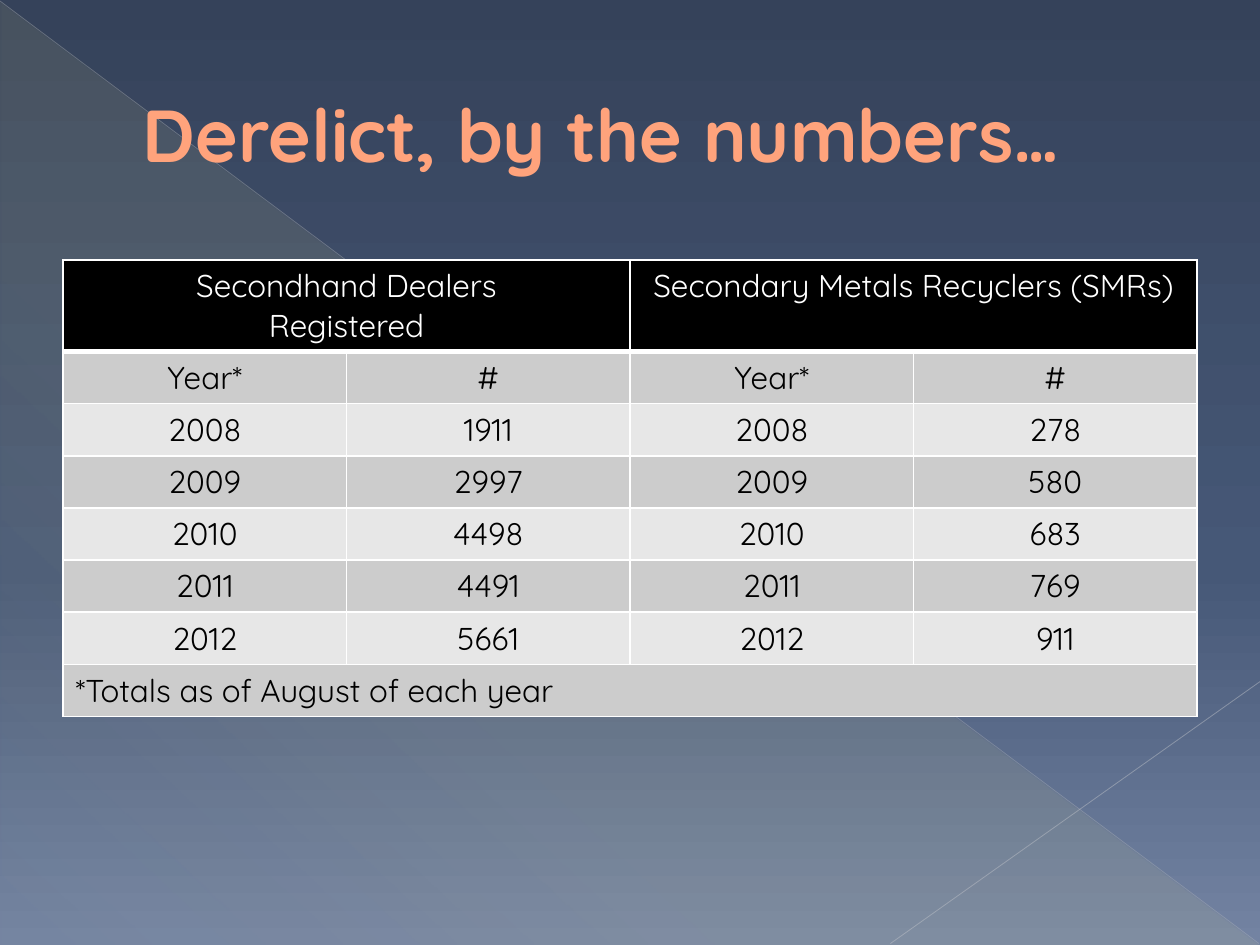
from dataclasses import dataclass

from lxml.etree import SubElement
from pptx import Presentation
from pptx.dml.color import RGBColor
from pptx.enum.shapes import MSO_CONNECTOR as CONNECTOR, MSO_SHAPE as SHAPE
from pptx.enum.text import MSO_ANCHOR as ANCHOR, MSO_AUTO_SIZE as AUTO_SIZE, PP_ALIGN as ALIGN
from pptx.oxml.ns import qn
from pptx.util import Cm, Pt


@dataclass(frozen=True)
class Theme:
    font: str = "Quicksand"
    title_size: float = 42
    body_size: float = 18
    title: str = "FFA37C"
    title_outline: str = "B05D26"
    header: str = "000000"
    header_text: str = "FFFFFF"
    body_text: str = "000000"
    bands: tuple = ("CCCCCC", "E7E7E7")
    border: str = "FFFFFF"
    backdrop: tuple = ((0, "35425A", 100), (60, "465877", 100), (100, "7383A2", 100))
    wedge: tuple = ((0, "FFF39D", 10), (70, "FFF39D", 8), (100, "FFF39D", 1))
    diagonal: str = "BABDC4"
    corner: str = "C1C4CA"


THEME = Theme()
HEADERS = ("Secondhand Dealers\nRegistered", "Secondary Metals Recyclers (SMRs)")
ROWS = (
    ("Year*", "#", "Year*", "#"),
    ("2008", "1911", "2008", "278"),
    ("2009", "2997", "2009", "580"),
    ("2010", "4498", "2010", "683"),
    ("2011", "4491", "2011", "769"),
    ("2012", "5661", "2012", "911"),
)
FOOTNOTE = "*Totals as of August of each year"


def rgb(color):
    return RGBColor.from_string(color)


def add_color(parent, color, opacity=100):
    clr = SubElement(parent, qn("a:srgbClr"), val=color)
    if opacity < 100:
        SubElement(clr, qn("a:alpha"), val=str(opacity * 1000))


def set_gradient(fill, parent, stops, angle):
    """Give fill a gradient of (position, colour, opacity) stops, clockwise from the right."""
    fill.gradient()
    grad = parent.find(".//" + qn("a:gradFill"))
    for child in list(grad):
        grad.remove(child)
    gs_list = SubElement(grad, qn("a:gsLst"))
    for pos, color, opacity in stops:
        add_color(SubElement(gs_list, qn("a:gs"), pos=str(pos * 1000)), color, opacity)
    SubElement(grad, qn("a:lin"), ang=str(angle * 60000), scaled="0")


def add_wedge(s):
    sp = s.shapes.add_shape(SHAPE.RIGHT_TRIANGLE, Cm(0.02), Cm(0.04), Cm(25.36), Cm(19))
    sp.shadow.inherit = False
    sp.line.fill.background()
    set_gradient(sp.fill, sp.element.spPr, THEME.wedge, 133)


def add_line(s, start, end, color, width, opacity):
    line = s.shapes.add_connector(CONNECTOR.STRAIGHT, *map(Cm, start + end))
    line.line.width = Pt(width)
    line.line.color.rgb = rgb(color)
    clr = line.element.spPr.find(".//" + qn("a:srgbClr"))
    SubElement(clr, qn("a:alpha"), val=str(opacity * 1000))
    SubElement(line.element.spPr, qn("a:effectLst"))


def add_title(s, text):
    title = s.shapes.title
    s.shapes.element.append(title.element)  # in front of the backdrop
    title.left, title.top, title.width, title.height = Cm(1.27), Cm(0.74), Cm(22.86), Cm(3.89)
    tf = title.text_frame
    tf.text = text
    tf.auto_size = AUTO_SIZE.NONE
    tf.vertical_anchor = ANCHOR.MIDDLE
    p = tf.paragraphs[0]
    p.alignment = ALIGN.LEFT
    pPr = p._p.get_or_add_pPr()
    pPr.set("marL", str(Cm(1.35)))
    pPr.set("indent", "0")
    font = p.runs[0].font
    font.name, font.size, font.bold = THEME.font, Pt(THEME.title_size), True
    font.color.rgb = rgb(THEME.title)
    outline = SubElement(p.runs[0]._r.get_or_add_rPr(), qn("a:ln"), w=str(Pt(0.5)))
    add_color(SubElement(outline, qn("a:solidFill")), THEME.title_outline)
    outline.getparent().insert(0, outline)


def format_cell(cell, fill, color, bottom=1, align=ALIGN.CENTER):
    tcPr = cell._tc.get_or_add_tcPr()
    for side, width in (("L", 1), ("R", 1), ("T", 1), ("B", bottom)):
        border = SubElement(tcPr, qn(f"a:ln{side}"), w=str(Pt(width)))
        add_color(SubElement(border, qn("a:solidFill")), THEME.border)
    cell.fill.solid()
    cell.fill.fore_color.rgb = rgb(fill)
    for p in cell.text_frame.paragraphs:
        p.alignment = align
        for r in p.runs:
            r.font.name, r.font.size, r.font.bold = THEME.font, Pt(THEME.body_size), False
            r.font.color.rgb = rgb(color)


def add_numbers_table(s):
    last = len(ROWS) + 1
    frame = s.shapes.add_table(last + 1, 4, Cm(1.27), Cm(5.24), Cm(22.86), Cm(9.18))
    table = frame.table
    for i, row in enumerate(table.rows):
        row.height = Cm(1.05 if i else 1.83)

    for col, text in zip((0, 2), HEADERS):
        table.cell(0, col).merge(table.cell(0, col + 1))
        table.cell(0, col).text_frame.text = text
    for i, values in enumerate(ROWS, 1):
        for j, value in enumerate(values):
            table.cell(i, j).text_frame.text = value
    table.cell(last, 0).merge(table.cell(last, 3))
    table.cell(last, 0).text_frame.text = FOOTNOTE

    for i, row in enumerate(table.rows):
        for cell in row.cells:
            if i == 0:
                format_cell(cell, THEME.header, THEME.header_text, bottom=3)
            else:
                align = ALIGN.LEFT if i == last else ALIGN.CENTER
                format_cell(cell, THEME.bands[(i - 1) % 2], THEME.body_text, align=align)


def main():
    prs = Presentation()
    prs.slide_width, prs.slide_height = Cm(25.4), Cm(19.05)
    s = prs.slides.add_slide(prs.slide_layouts[5])
    set_gradient(s.background.fill, s.element, THEME.backdrop, 90)
    add_wedge(s)
    add_line(s, (0, 0.02), (25.38, 19.02), THEME.diagonal, 0.39, 35)
    add_line(s, (25.4, 13.74), (17.95, 19.02), THEME.corner, 0.47, 45)
    add_title(s, "Derelict, by the numbers…")
    add_numbers_table(s)
    prs.save("out.pptx")


if __name__ == "__main__":
    main()
